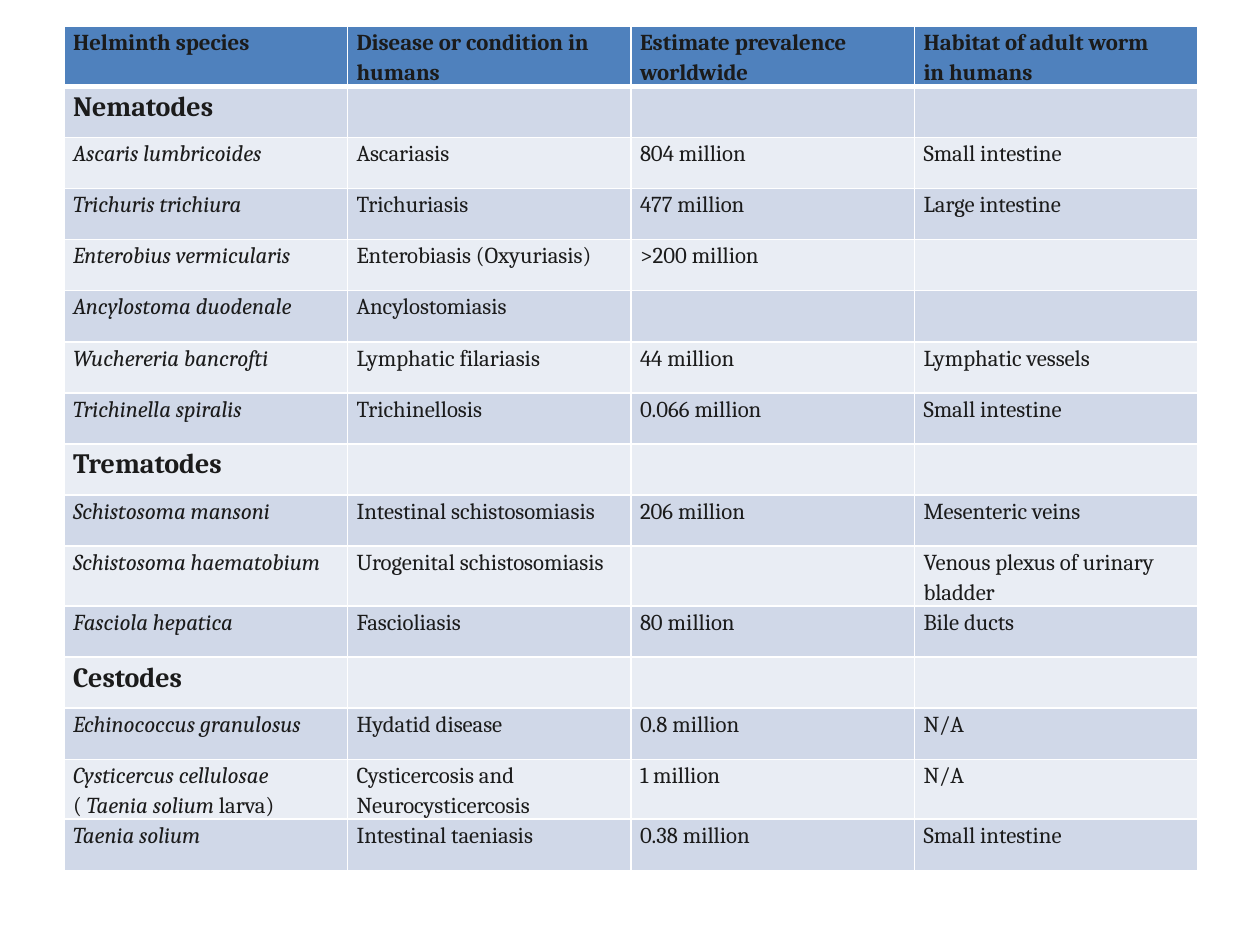
"""Build a one-slide table of helminth species, diseases, prevalence and habitat."""
from lxml import etree
from pptx import Presentation
from pptx.dml.color import RGBColor
from pptx.oxml.ns import qn
from pptx.util import Inches, Pt

COLORS = {
    "text": "1B1B1B",
    "header": "4F81BD",
    "odd": "D0D8E8",
    "even": "E9EDF4",
    "border": "FFFFFF",
}
HEADERS = [
    "Helminth species",
    "Disease or condition in\nhumans",
    "Estimate prevalence\nworldwide",
    "Habitat of adult worm\nin humans",
]
GROUPS = {
    "Nematodes": [
        ("Ascaris lumbricoides", "Ascariasis", "804 million", "Small intestine"),
        ("Trichuris trichiura", "Trichuriasis", "477 million", "Large intestine"),
        ("Enterobius vermicularis", "Enterobiasis (Oxyuriasis)", ">200 million", ""),
        ("Ancylostoma duodenale", "Ancylostomiasis", "", ""),
        ("Wuchereria bancrofti", "Lymphatic filariasis", "44 million", "Lymphatic vessels"),
        ("Trichinella spiralis", "Trichinellosis", "0.066 million", "Small intestine"),
    ],
    "Trematodes": [
        ("Schistosoma mansoni", "Intestinal schistosomiasis", "206 million", "Mesenteric veins"),
        ("Schistosoma haematobium", "Urogenital schistosomiasis", "",
         "Venous plexus of urinary\nbladder"),
        ("Fasciola hepatica", "Fascioliasis", "80 million", "Bile ducts"),
    ],
    "Cestodes": [
        ("Echinococcus granulosus", "Hydatid disease", "0.8 million", "N/A"),
        ("Cysticercus cellulosae\n*( *Taenia solium* larva)",
         "Cysticercosis and\nNeurocysticercosis", "1 million", "N/A"),
        ("Taenia solium", "Intestinal taeniasis", "0.38 million", "Small intestine"),
    ],
}


class TablePage:
    """Hold the text style and the current slide."""

    def __init__(self, deck, font="Cambria", size=13, group_size=16):
        self.page = deck.slides.add_slide(deck.slide_layouts[6])
        self.font, self.size, self.group_size = font, size, group_size

    def table(self, rows, left, top, width, height):
        """Add the table and return it with its rows banded and ruled."""
        frame = self.page.shapes.add_table(len(rows), len(HEADERS), left, top, width, height)
        table = frame.table
        for index, row in enumerate(rows):
            band = "header" if index == 0 else "odd" if index % 2 else "even"
            for cell in table.rows[index].cells:
                self.borders(cell, top=3 if index == 1 else 1, bottom=3 if index == 0 else 1)
                cell.fill.solid()
                cell.fill.fore_color.rgb = RGBColor.from_string(COLORS[band])
            is_group = len(row) == 1
            for column, text in enumerate(row):
                self.text(
                    table.cell(index, column),
                    text,
                    size=self.group_size if is_group else self.size,
                    bold=is_group or index == 0,
                    species=column == 0 and index > 0 and not is_group,
                )
        return table

    def text(self, cell, text, size, bold, species):
        """Write a cell; in a species name an asterisk switches italics off and on."""
        if not text:
            return
        cell.margin_left = cell.margin_right = Inches(0.07)
        cell.margin_top = cell.margin_bottom = 0
        para = cell.text_frame.paragraphs[0]
        para.line_spacing = 1.15
        for position, part in enumerate(text.split("*")):
            for number, line in enumerate(part.split("\n")):
                if number:
                    para.add_line_break()
                if line:
                    self.span(para, line, size, bold, species and position % 2 == 0)

    def span(self, para, text, size, bold, italic):
        """Add one formatted run."""
        span = para.add_run()
        span.text = text
        span.font.name, span.font.size = self.font, Pt(size)
        span.font.bold, span.font.italic = bold, italic
        span.font.color.rgb = RGBColor.from_string(COLORS["text"])

    def borders(self, cell, top, bottom):
        """Rule the four sides of a cell, widths in points."""
        properties = cell._tc.get_or_add_tcPr()
        for side, width in (("L", 1), ("R", 1), ("T", top), ("B", bottom)):
            line = etree.SubElement(properties, qn(f"a:ln{side}"), w=str(Pt(width)))
            fill = etree.SubElement(line, qn("a:solidFill"))
            etree.SubElement(fill, qn("a:srgbClr"), val=COLORS["border"])


def main():
    """Build and save the deck."""
    deck = Presentation()
    deck.slide_width, deck.slide_height = Inches(10), Inches(7.5)
    rows = [HEADERS]
    for group, species in GROUPS.items():
        rows += [(group,), *species]
    TablePage(deck).table(rows, Inches(0.51), Inches(0.21), Inches(9), Inches(6.49))
    deck.save("out.pptx")


if __name__ == "__main__":
    main()
